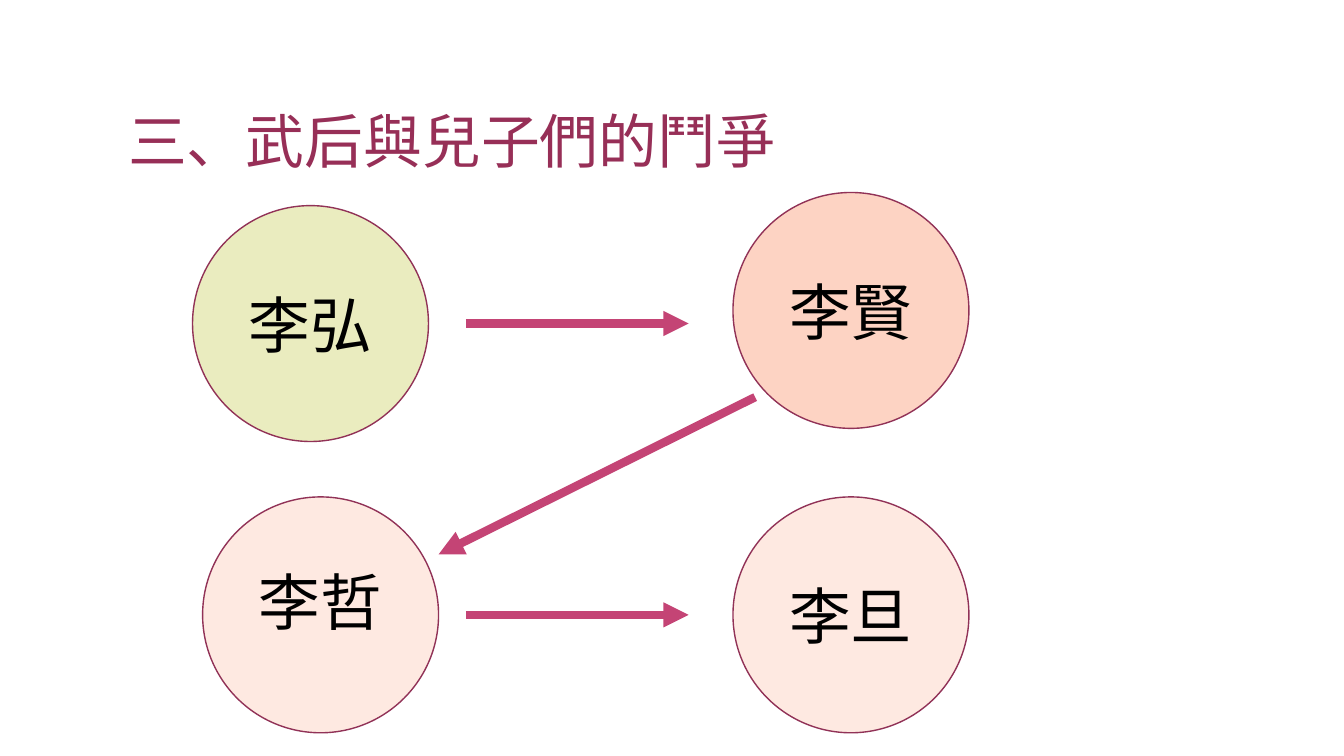
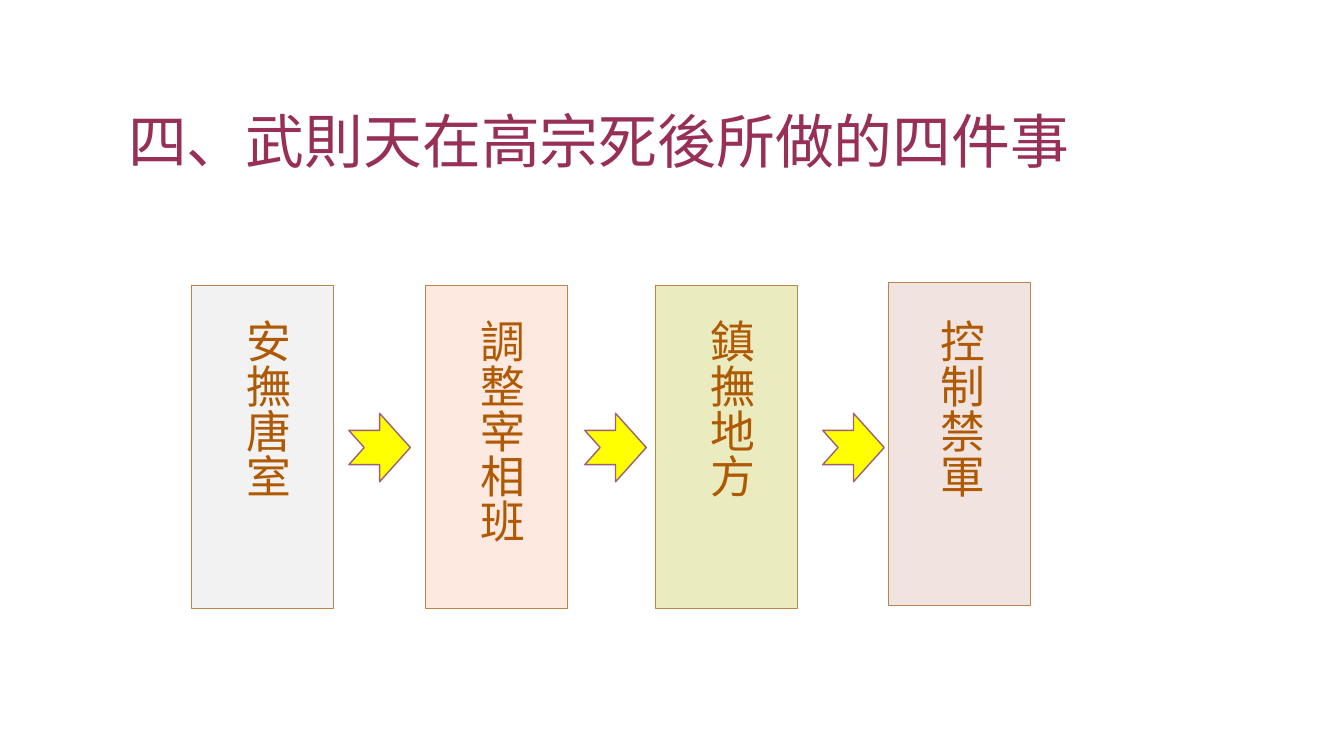
from dataclasses import dataclass

from lxml.etree import SubElement
from pptx import Presentation
from pptx.dml.color import RGBColor
from pptx.enum.shapes import MSO_CONNECTOR, MSO_SHAPE
from pptx.enum.text import MSO_ANCHOR, MSO_AUTO_SIZE, PP_ALIGN
from pptx.oxml.ns import qn
from pptx.util import Emu, Pt

EMU_PER_PX = 9144
TITLE_ONLY_LAYOUT = 5


@dataclass(frozen=True)
class Theme:
    font: str = "Noto Sans CJK SC"
    title: str = "972F57"
    circle_text: str = "000000"
    circle_line: str = "913257"
    connector: str = "C44475"
    green: str = "EAECBF"
    salmon: str = "FDD3C3"
    peach: str = "FEE9E1"
    grey: str = "F2F2F2"
    rose: str = "F1E3E0"
    card_line: str = "BA844D"
    card_text: str = "AF5903"
    arrow: str = "FFFF00"
    arrow_line: str = "9E5F7A"
    title_size: int = 42
    circle_size: int = 44
    card_size: int = 32
    outline: int = 1
    connector_width: int = 6


@dataclass(frozen=True)
class Box:
    left: int
    top: int
    width: int
    height: int

    def inner(self, left, top, width, height):
        """Return a box whose corner is measured from this one."""
        return Box(self.left + left, self.top + top, width, height)

    def emu(self):
        return [px(n) for n in (self.left, self.top, self.width, self.height)]


THEME = Theme()
SLIDE = Box(0, 0, 1333, 750)
TITLE = SLIDE.inner(117, 50, 1100, 130)


def px(length):
    return Emu(length * EMU_PER_PX)


def rgb(color):
    return RGBColor.from_string(color)


def write(text_frame, text, size, color):
    text_frame.text = text
    paragraph = text_frame.paragraphs[0]
    for run in paragraph.runs:
        run.font.name = THEME.font
        run.font.size = Pt(size)
        run.font.color.rgb = rgb(color)
        east_asian = SubElement(run.font._element, qn("a:ea"))
        east_asian.set("typeface", THEME.font)
    return paragraph


def add_titled_slide(presentation, title):
    slide = presentation.slides.add_slide(presentation.slide_layouts[TITLE_ONLY_LAYOUT])
    shape = slide.shapes.title
    shape.left, shape.top, shape.width, shape.height = TITLE.emu()
    text_frame = shape.text_frame
    text_frame.vertical_anchor = MSO_ANCHOR.BOTTOM
    text_frame.auto_size = MSO_AUTO_SIZE.NONE
    paragraph = write(text_frame, title, THEME.title_size, THEME.title)
    paragraph.alignment = PP_ALIGN.LEFT
    paragraph.line_spacing = 0.9
    return slide


def add_filled_shape(slide, kind, box, fill, line):
    shape = slide.shapes.add_shape(kind, *box.emu())
    shape.shadow.inherit = False
    shape.fill.solid()
    shape.fill.fore_color.rgb = rgb(fill)
    shape.line.color.rgb = rgb(line)
    shape.line.width = Pt(THEME.outline)
    return shape


def add_circle(slide, box, name, fill, text_lift):
    """Draw a named circle with its text raised by text_lift px."""
    circle = add_filled_shape(slide, MSO_SHAPE.OVAL, box, fill, THEME.circle_line)
    text_frame = circle.text_frame
    text_frame.word_wrap = True
    text_frame.vertical_anchor = MSO_ANCHOR.MIDDLE
    text_frame.margin_top = px(5)
    text_frame.margin_bottom = px(5 + 2 * text_lift)
    paragraph = write(text_frame, name, THEME.circle_size, THEME.circle_text)
    paragraph.alignment = PP_ALIGN.CENTER


def add_arrow_line(slide, box, start, end):
    points = [px(n) for x, y in (start, end) for n in (box.left + x, box.top + y)]
    connector = slide.shapes.add_connector(MSO_CONNECTOR.STRAIGHT, *points)
    connector.line.color.rgb = rgb(THEME.connector)
    connector.line.width = Pt(THEME.connector_width)
    SubElement(connector.line._get_or_add_ln(), qn("a:tailEnd")).set("type", "triangle")
    SubElement(connector._element.spPr, qn("a:effectLst"))


def add_vertical_label(slide, box, text):
    text_frame = slide.shapes.add_textbox(*box.emu()).text_frame
    text_frame.word_wrap = False
    text_frame.auto_size = MSO_AUTO_SIZE.SHAPE_TO_FIT_TEXT
    text_frame._txBody.bodyPr.set("vert", "eaVert")
    write(text_frame, text, THEME.card_size, THEME.card_text)


def add_succession(slide, box):
    diameter = 234
    circles = [
        ("李弘", 0, 13, THEME.green, 0),
        ("李賢", 536, 0, THEME.salmon, 0),
        ("李哲", 10, 302, THEME.peach, 14),
        ("李旦", 536, 302, THEME.peach, 0),
    ]
    for name, left, top, fill, text_lift in circles:
        add_circle(slide, box.inner(left, top, diameter, diameter), name, fill, text_lift)
    arrows = [
        ((271, 130), (492, 130)),
        ((558, 203), (244, 359)),
        ((271, 419), (492, 419)),
    ]
    for start, end in arrows:
        add_arrow_line(slide, box, start, end)


def add_measures(slide, box):
    cards = [
        ("安撫唐室", 0, 3, 33, THEME.grey),
        ("調整宰相班", 232, 3, 265, THEME.peach),
        ("鎮撫地方", 460, 3, 493, THEME.green),
        ("控制禁軍", 691, 0, 721, THEME.rose),
    ]
    for text, left, top, label_left, fill in cards:
        card = box.inner(left, top, 141, 321)
        add_filled_shape(slide, MSO_SHAPE.RECTANGLE, card, fill, THEME.card_line)
        label = box.inner(label_left, 27, 74, 14 + 44 * len(text))
        add_vertical_label(slide, label, text)
    for left in (156, 390, 626):
        arrow = box.inner(left, 130, 61, 68)
        add_filled_shape(slide, MSO_SHAPE.NOTCHED_RIGHT_ARROW, arrow,
                         THEME.arrow, THEME.arrow_line)


def main():
    presentation = Presentation()
    presentation.slide_width = px(SLIDE.width)
    presentation.slide_height = px(SLIDE.height)
    slide = add_titled_slide(presentation, "三、武后與兒子們的鬥爭")
    add_succession(slide, SLIDE.inner(191, 191, 770, 536))
    slide = add_titled_slide(presentation, "四、武則天在高宗死後所做的四件事")
    add_measures(slide, SLIDE.inner(190, 280, 832, 324))
    presentation.save("out.pptx")


if __name__ == "__main__":
    main()
